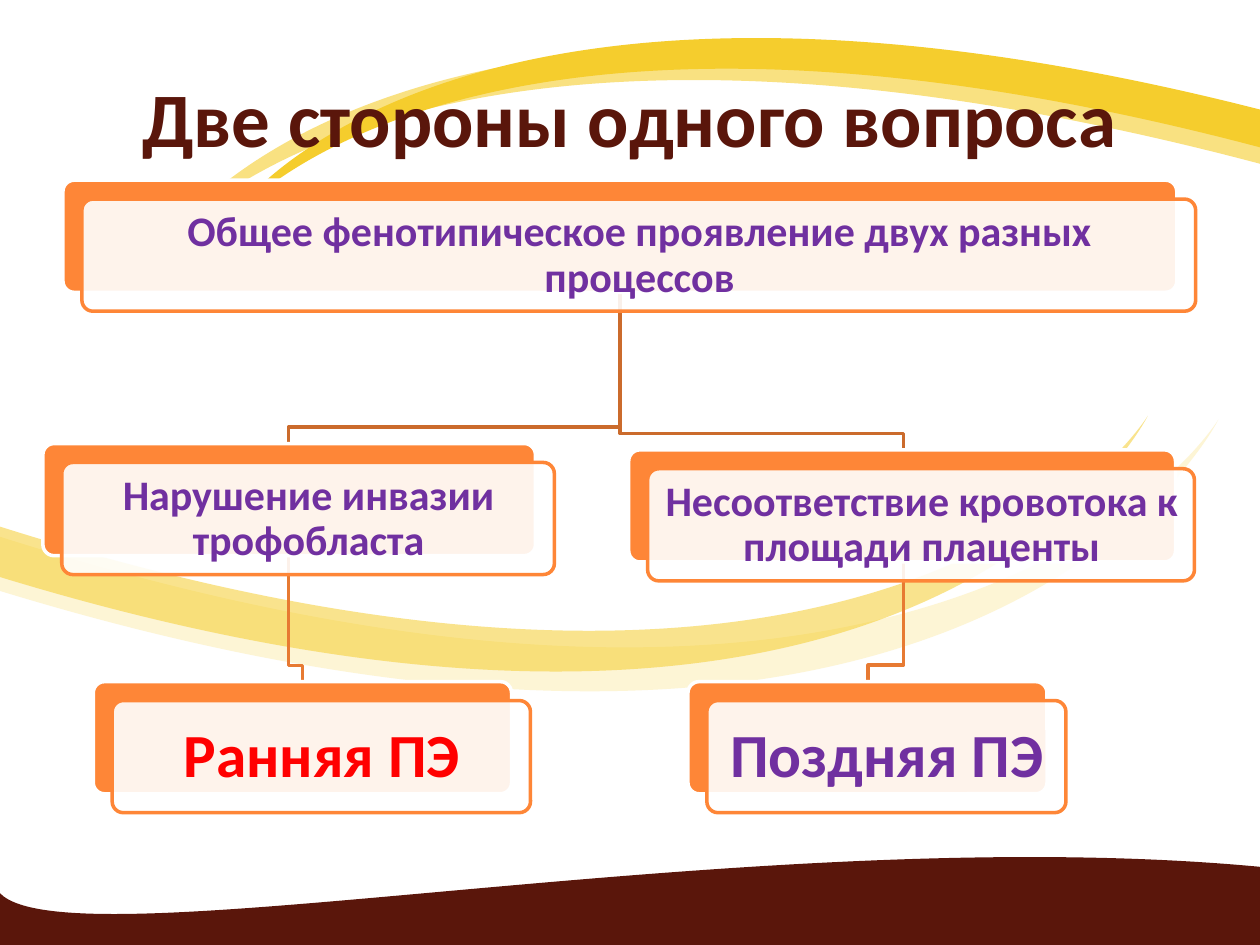
"""Build a slide with a two-branch hierarchy over a waved background."""
from lxml import etree
from pptx import Presentation
from pptx.dml.color import RGBColor
from pptx.enum import shapes, text
from pptx.oxml.ns import qn
from pptx.util import Inches, Pt

ORANGE, PURPLE, BROWN, WHITE = "FE8637", "7030A0", "5A160B", "FFFFFF"

presentation = Presentation()
presentation.slide_width, presentation.slide_height = Inches(10), Inches(7.5)
slide = presentation.slides.add_slide(presentation.slide_layouts[6])


def paint(shape, fill=None, line=None, opacity=100):
    """Set the fill and outline of a shape and remove its shadow."""
    shape.shadow.inherit = False
    shape.fill.background()
    shape.line.fill.background()
    if fill:
        shape.fill.solid()
        shape.fill.fore_color.rgb = RGBColor.from_string(fill)
    if opacity < 100:
        color = shape._element.spPr.find(qn("a:solidFill"))[0]
        etree.SubElement(color, qn("a:alpha")).set("val", str(opacity * 1000))
    if line:
        shape.line.color.rgb = RGBColor.from_string(line)
        shape.line.width = Pt(2)


def add_label(left, top, width, height, label, size, color, inset=0.1, spacing=1.0):
    """Add a bold, centred text box."""
    box = slide.shapes.add_textbox(Inches(left), Inches(top), Inches(width), Inches(height))
    frame = box.text_frame
    frame.word_wrap = True
    frame.vertical_anchor = text.MSO_ANCHOR.MIDDLE
    frame.margin_left = frame.margin_right = Inches(inset)
    frame.margin_top = frame.margin_bottom = Inches(inset)
    paragraph = frame.paragraphs[0]
    paragraph.text = label
    paragraph.alignment = text.PP_ALIGN.CENTER
    paragraph.line_spacing = spacing
    paragraph.font.name, paragraph.font.size, paragraph.font.bold = "Calibri", Pt(size), True
    paragraph.font.color.rgb = RGBColor.from_string(color)


waves = [
    ([(0, 7.09), (0.56, 7.67), (5.96, 6.5), (10, 6.88),
      (10, 7.09), (10.01, 7.32), (10.01, 7.54), (0, 7.51)], BROWN, 100),
    ([(0, 4.26), (7.63, 6.68), (9.67, 3.33), (9.67, 3.33), (9.67, 3.33),
      (7.82, 7.08), (0, 4.69), (0, 4.69), (0, 4.63), (0, 4.26)], "FDF5D5", 100),
    ([(10, 1.3), (3.09, -0.53), (1.25, 2), (1.25, 2), (1.25, 2),
      (2.92, -0.83), (10, 0.97), (10, 0.97), (10, 1.02), (10, 1.3)], "F9E181", 100),
    ([(10, 1.17), (3.49, -0.55), (1.75, 1.83), (1.75, 1.83), (1.75, 1.83),
      (3.33, -0.83), (10, 0.87), (10, 0.87), (10, 0.91), (10, 1.17)], "F5CD2D", 100),
    ([(0, 4.18), (7.2, 6.46), (9.11, 3.3), (9.11, 3.3), (9.11, 3.3),
      (7.37, 6.83), (0, 4.58), (0, 4.58), (0, 4.53), (0, 4.18)], "F5CD2D", 54),
]
for points, color, opacity in waves:
    start, *controls = [(Inches(x), Inches(y)) for x, y in points]
    builder = slide.shapes.build_freeform(*start)
    builder.add_line_segments(controls, close=True)
    wave = builder.convert_to_shape()
    segments = list(wave._element.iter(qn("a:lnTo")))
    for first, second, third in zip(segments[::3], segments[1::3], segments[2::3]):
        curve = etree.Element(qn("a:cubicBezTo"))
        first.addprevious(curve)
        for segment in (first, second, third):
            curve.append(segment[0])
            segment.getparent().remove(segment)
    paint(wave, color, opacity=opacity)

add_label(0.5, 0.3, 9, 1.25, "Две стороны одного вопроса", 44, BROWN)

branches = [
    (7.17, 4.46, 6.89, 5.41, "E77A32"),
    (4.92, 2.33, 7.17, 3.57, "CB6B2C"),
    (2.29, 4.42, 2.4, 5.41, "E77A32"),
    (4.92, 2.33, 2.29, 3.52, "CB6B2C"),
]
for x1, y1, x2, y2, color in branches:
    bend = y2 - 0.13
    builder = slide.shapes.build_freeform(Inches(x1), Inches(y1))
    builder.add_line_segments(
        [(Inches(x), Inches(y)) for x, y in ((x1, bend), (x2, bend), (x2, y2))], close=False)
    paint(builder.convert_to_shape(), line=color)

cards = [
    (0.5, 1.43, 8.84, "Общее фенотипическое проявление двух разных процессов", 24, 0.1, PURPLE),
    (0.34, 3.52, 3.91, "Нарушение инвазии трофобласта", 24, 0.1, PURPLE),
    (0.74, 5.41, 3.32, "Ранняя ПЭ", 35, 0.15, "FF0000"),
    (4.99, 3.57, 4.34, "Несоответствие кровотока к площади плаценты", 24, 0.1, PURPLE),
    (5.46, 5.41, 2.85, "Поздняя ПЭ", 35, 0.15, PURPLE),
]
for left, top, width, label, size, inset, color in cards:
    for offset, fill, line, opacity in ((0, ORANGE, WHITE, 100), (0.15, WHITE, ORANGE, 90)):
        card = slide.shapes.add_shape(
            shapes.MSO_SHAPE.ROUNDED_RECTANGLE, Inches(left + offset), Inches(top + offset),
            Inches(width), Inches(0.89))
        card.adjustments[0] = 0.1
        paint(card, fill, line, opacity)
    add_label(left + 0.18, top + 0.18, width - 0.05, 0.84, label, size, color, inset, 0.9)

presentation.save("out.pptx")
